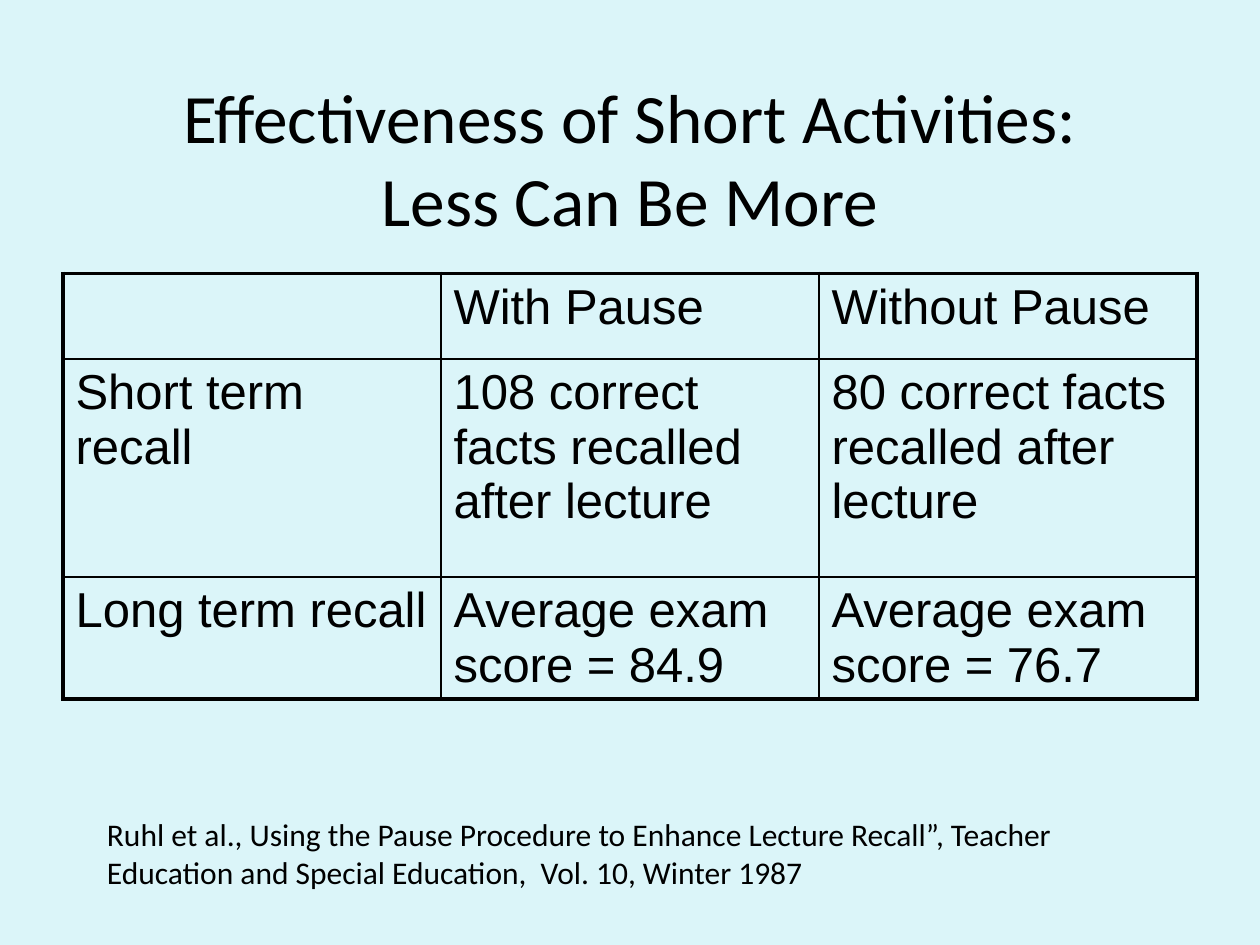
import pptx
import pptx.util
import pptx.dml.color
import pptx.enum.text
import pptx.oxml.ns
from lxml import etree
from dataclasses import dataclass

Inches = pptx.util.Inches
qn = pptx.oxml.ns.qn


@dataclass
class Theme:
    back: str = "DBF5F9"
    ink: str = "000000"
    head: float = 39.6
    cell: float = 28
    note: float = 18
    sans: str = "Calibri"
    grid: str = "Arial"
    thick: float = 2.25
    thin: float = 1


theme = Theme()


def style(frame, face, size):
    for para in frame.paragraphs:
        for run in para.runs:
            run.font.name = face
            run.font.size = pptx.util.Pt(size)
            run.font.color.rgb = pptx.dml.color.RGBColor.from_string(theme.ink)


def edge(cell, side, width):
    props = cell._tc.get_or_add_tcPr()
    line = etree.SubElement(props, qn("a:ln" + side), w=str(pptx.util.Pt(width)))
    fill = etree.SubElement(line, qn("a:solidFill"))
    etree.SubElement(fill, qn("a:srgbClr"), val=theme.ink)


deck = pptx.Presentation()
deck.slide_width = Inches(10)
deck.slide_height = Inches(7.5)
slide = deck.slides.add_slide(deck.slide_layouts[5])
slide.background.fill.solid()
slide.background.fill.fore_color.rgb = pptx.dml.color.RGBColor.from_string(theme.back)

title = slide.shapes.title
title.left, title.top = Inches(0.5), Inches(0.5)
title.width, title.height = Inches(9), Inches(1.5)
frame = title.text_frame
frame.text = "Effectiveness of Short Activities:\vLess Can Be More"
frame.auto_size = pptx.enum.text.MSO_AUTO_SIZE.NONE
frame.vertical_anchor = pptx.enum.text.MSO_ANCHOR.MIDDLE
frame.paragraphs[0].alignment = pptx.enum.text.PP_ALIGN.CENTER
style(frame, theme.sans, theme.head)
for gap in frame.paragraphs[0]._p.findall(qn("a:br")):
    etree.SubElement(gap, qn("a:rPr"), sz=str(round(theme.head * 100)))

rows = [
    ["", "With Pause", "Without Pause"],
    ["Short term recall", "108 correct facts recalled after lecture",
     "80 correct facts recalled after lecture"],
    ["Long term recall", "Average exam score = 84.9", "Average exam score = 76.7"],
]
highs = [0.68, 1.73, 0.86]
last = len(rows) - 1
table = slide.shapes.add_table(
    3, 3, Inches(0.5), Inches(2.17), Inches(9), Inches(sum(highs))).table
table.first_row = False
table.horz_banding = False
for col in table.columns:
    col.width = Inches(3)
for r, (row, high) in enumerate(zip(rows, highs)):
    table.rows[r].height = Inches(high)
    for c, text in enumerate(row):
        cell = table.cell(r, c)
        cell.text_frame.text = text
        style(cell.text_frame, theme.grid, theme.cell)
        sides = {"L": c == 0, "R": c == last, "T": r == 0, "B": r == last}
        for side, rim in sides.items():
            edge(cell, side, theme.thick if rim else theme.thin)
        cell.fill.background()

note = slide.shapes.add_textbox(Inches(0.75), Inches(6.42), Inches(8.75), Inches(0.71))
note.text_frame.word_wrap = True
note.text_frame.auto_size = pptx.enum.text.MSO_AUTO_SIZE.SHAPE_TO_FIT_TEXT
note.text_frame.text = (
    "Ruhl et al., Using the Pause Procedure to Enhance Lecture Recall”, Teacher "
    "Education and Special Education,  Vol. 10, Winter 1987")
style(note.text_frame, theme.sans, theme.note)

deck.save("out.pptx")
